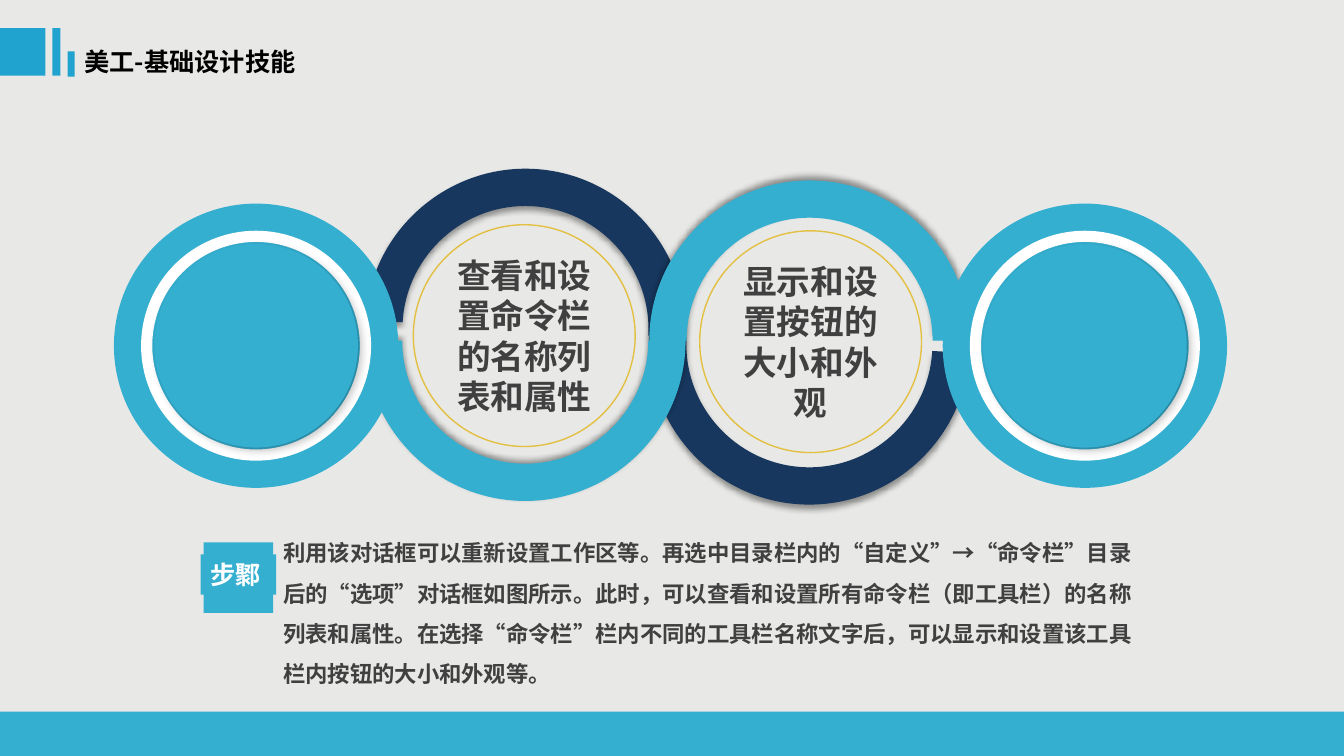
from math import cos, pi, sin

from lxml import etree
from pptx import Presentation
from pptx.dml.color import RGBColor
from pptx.enum.lang import MSO_LANGUAGE_ID
from pptx.enum.shapes import MSO_SHAPE
from pptx.enum.text import MSO_ANCHOR, PP_ALIGN
from pptx.oxml.ns import qn
from pptx.util import Inches, Pt

RECT, OVAL = MSO_SHAPE.RECTANGLE, MSO_SHAPE.OVAL
TOP, MIDDLE = MSO_ANCHOR.TOP, MSO_ANCHOR.MIDDLE
LEFT, CENTER = PP_ALIGN.LEFT, PP_ALIGN.CENTER
CHINESE = MSO_LANGUAGE_ID.SIMPLIFIED_CHINESE
FONT = "Noto Sans CJK SC"
HEX = {"paper": "E8E8E6", "sky": "35AFD0", "blue": "21A3D0", "navy": "17375E",
       "gold": "E3BF42", "gray": "404040", "white": "FFFFFF", "black": "000000"}
RGB = {name: RGBColor.from_string(code) for name, code in HEX.items()}


def dress(shape, fill=None, line=None, width=1, shadow=None):
    """Set fill, outline and shadow (opacity, blur, distance, angle)."""
    shape.shadow.inherit = False
    if fill:
        shape.fill.solid()
        shape.fill.fore_color.rgb = RGB[fill]
    else:
        shape.fill.background()
    if line:
        shape.line.color.rgb = RGB[line]
        shape.line.width = Pt(width)
    else:
        shape.line.fill.background()
    if shadow:
        alpha, blur, dist, angle = shadow
        effects = shape._element.spPr.find(qn("a:effectLst"))
        outer = etree.SubElement(effects, qn("a:outerShdw"), blurRad=str(Pt(blur)),
                                 dist=str(Pt(dist)), dir=str(angle * 60000),
                                 rotWithShape="0")
        color = etree.SubElement(outer, qn("a:srgbClr"), val=HEX["black"])
        etree.SubElement(color, qn("a:alpha"), val=str(alpha * 1000))
    return shape


def write(shape, text, size=18, color="gray", align=LEFT, anchor=TOP,
          inset=None, lead=None, gap=None):
    frame = shape.text_frame
    frame.word_wrap = True
    frame.vertical_anchor = anchor
    if inset is not None:
        frame.margin_left = frame.margin_right = Inches(inset)
        frame.margin_top = frame.margin_bottom = Inches(inset)
    para = frame.paragraphs[0]
    para.alignment = align
    if lead:
        para.line_spacing = lead
    if gap:
        para.space_before = para.space_after = Pt(gap)
    run = para.add_run()
    run.text = text
    font = run.font
    font.name, font.size, font.bold = FONT, Pt(size), True
    font.color.rgb = RGB[color]
    font.language_id = CHINESE
    etree.SubElement(run._r.get_or_add_rPr(), qn("a:ea"), typeface=FONT)


deck = Presentation()
deck.slide_width, deck.slide_height = Inches(13.33), Inches(7.5)
slide = deck.slides.add_slide(deck.slide_layouts[6])
slide.background.fill.solid()
slide.background.fill.fore_color.rgb = RGB["paper"]
shapes = slide.shapes

# Footer band
dress(shapes.add_shape(RECT, *map(Inches, (0, 7.06, 13.33, 0.44))), "sky")

# Two S-shaped bands, each with a thin circle and its label
NEAR, FAR, OUTER, INNER = 5.21, 8.03, 1.59, 1.22
BEND = 0.55  # handle length of a quarter circle, as a share of its radius
# Arcs: centre, radius, then the quarter turns they pass through
ARCS = [(FAR, OUTER, (1, 0)), (FAR, INNER, (0, 1, 2)), (NEAR, OUTER, (0, -1, -2)),
        (NEAR, INNER, (-2, -1, 0)), (FAR, OUTER, (2, 1))]
bands = [
    ("查看和设置命令栏的名称列表和属性", 4.1, 2.23, "navy", 3.34, 1, 3.1, 90),
    ("显示和设置按钮的大小和外观", 6.94, 2.29, "sky", 3.38, -1, 0, 270),
]
for label, left, top, color, mid, side, turn, angle in bands:
    disc = dress(shapes.add_shape(OVAL, *map(Inches, (left, top, 2.2, 2.2))), line="gold")
    write(disc, label, size=24, align=CENTER, anchor=MIDDLE, inset=0)

    dots, curves = [], []
    for mx, r, turns in ARCS:
        for i, quarter in enumerate(turns):
            a = quarter * pi / 2
            spot = mx + r * cos(a), mid + side * r * sin(a)
            if i:
                k = BEND * r * (quarter - turns[i - 1])
                curves.append(len(dots) - 1)
                dots.append((last[0] - k * sin(b), last[1] + side * k * cos(b)))
                dots.append((spot[0] + k * sin(a), spot[1] - side * k * cos(a)))
            dots.append(spot)
            last, b = spot, a
    dots = [(Inches(x), Inches(y)) for x, y in dots]
    pen = shapes.build_freeform(*dots[0])
    pen.add_line_segments(dots[1:])
    band = dress(pen.convert_to_shape(), color, shadow=(40, 4, 3, angle))
    band.rotation = turn

    # Join each run of three points into one curve
    lines = list(band._element.iter(qn("a:lnTo")))
    for i in curves:
        curve = lines[i]
        curve.tag = qn("a:cubicBezTo")
        for extra in lines[i + 1:i + 3]:
            curve.append(extra[0])
            curve.getparent().remove(extra)

# Outer badges: three nested discs on one centre
for mx in (2.54, 10.76):
    badge = shapes.add_group_shape().shapes
    for size, line, shadow in [(2.82, None, None), (2.17, "white", None),
                               (2.02, None, (23, 6, 3, 45))]:
        at = mx - size / 2, 3.43 - size / 2, size, size
        dress(badge.add_shape(OVAL, *map(Inches, at)), "sky", line, 8, shadow)

# Body text
body = shapes.add_textbox(*map(Inches, (2.71, 5.17, 8.64, 1.71)))
write(body, "利用该对话框可以重新设置工作区等。再选中目录栏内的“自定义”→“命令栏”目录"
      "后的“选项”对话框如图所示。此时，可以查看和设置所有命令栏（即工具栏）的名称"
      "列表和属性。在选择“命令栏”栏内不同的工具栏名称文字后，可以显示和设置该工具"
      "栏内按钮的大小和外观等。", size=16, lead=1.5, gap=11.2)

# Step tag
tag = shapes.add_group_shape().shapes
dress(tag.add_shape(RECT, *map(Inches, (2.02, 5.38, 0.69, 0.7))), "sky")
step = dress(tag.add_shape(RECT, *map(Inches, (1.99, 5.5, 0.75, 0.4))), "sky")
write(step, "步鄹", color="white")

# Heading with its bars
bars = shapes.add_group_shape().shapes
for at in [(0, 0.28, 0.45, 0.47), (0.52, 0.28, 0.08, 0.47), (0.67, 0.51, 0.07, 0.25)]:
    dress(bars.add_shape(RECT, *map(Inches, at)), "blue")
title = shapes.add_textbox(*map(Inches, (0.74, 0.41, 3.61, 0.4)))
write(title, "美工-基础设计技能", color="black")

deck.save("out.pptx")
